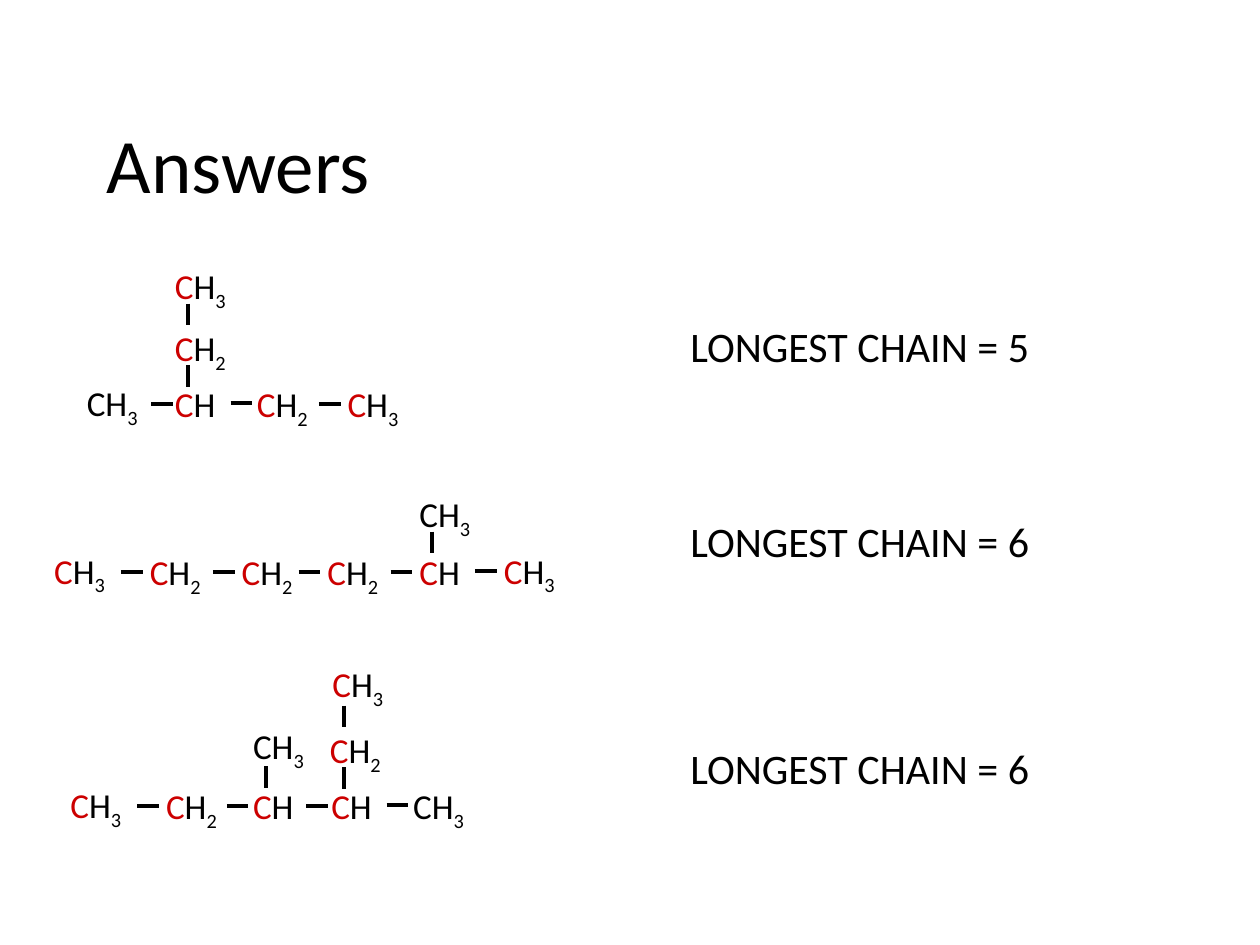
import pptx
import pptx.dml.color
import pptx.enum.shapes
import pptx.enum.text
import pptx.oxml.ns
import pptx.util
import lxml.etree

Pt = pptx.util.Pt
BLACK = "000000"
RED = "CC0000"
BOND_LENGTH = 12.4

# Formula, whether its carbon is on the longest chain, left, top
MOLECULES = [
    {
        "units": [("CH3", False, 42.5, 214.6), ("CH", True, 92.9, 215.3),
                  ("CH2", True, 139.7, 215.3), ("CH3", True, 191.5, 215.3),
                  ("CH2", True, 92.9, 182.9), ("CH3", True, 92.9, 147.6)],
        "across": [(86.4, 231.1), (131.8, 230.4), (182.2, 231.1)],
        "down": [(107.3, 208.8), (107.3, 173.5)],
        "answer": ("LONGEST CHAIN = 5", 179.3),
    },
    {
        "units": [("CH3", True, 23.8, 310.3), ("CH2", True, 78.5, 311),
                  ("CH2", True, 131, 311), ("CH2", True, 180, 311),
                  ("CH", True, 232.6, 311), ("CH3", True, 280.8, 310.3),
                  ("CH3", False, 232.6, 277.9)],
        "across": [(69.1, 326.9), (121.7, 326.9), (170.6, 326.9),
                   (223.2, 326.9), (271.4, 326.2)],
        "down": [(247, 303.8)],
        "answer": ("LONGEST CHAIN = 6", 290.9),
    },
    {
        "units": [("CH3", True, 33.1, 444.2), ("CH2", True, 87.8, 445),
                  ("CH", True, 137.5, 445), ("CH", True, 182.2, 445),
                  ("CH3", False, 229, 445), ("CH3", False, 137.5, 410.4),
                  ("CH2", True, 181.4, 412.6), ("CH3", True, 182.9, 375.1)],
        "across": [(78.5, 460.8), (129.6, 460.8), (175, 460.8), (221, 460.1)],
        "down": [(151.9, 437.8), (196.6, 438.5), (196.6, 403.2)],
        "answer": ("LONGEST CHAIN = 6", 420.5),
    },
]


def rgb(code):
    """Turn a hex string into a colour."""
    return pptx.dml.color.RGBColor.from_string(code)


def style(run, size, color=BLACK):
    """Give a run its font, size and colour."""
    run.font.name = "Calibri"
    run.font.size = Pt(size)
    run.font.color.rgb = rgb(color)


def add_box(shapes, left, top, width, height):
    """Add an empty wrapping text box and return its text frame."""
    frame = shapes.add_textbox(Pt(left), Pt(top), Pt(width), Pt(height)).text_frame
    frame.word_wrap = True
    return frame


def add_label(shapes, text, left, top, width, height, size):
    """Add a single-run line of text, centred vertically."""
    frame = add_box(shapes, left, top, width, height)
    frame.vertical_anchor = pptx.enum.text.MSO_ANCHOR.MIDDLE
    frame.text = text
    style(frame.paragraphs[0].runs[0], size)


def add_unit(shapes, formula, on_chain, left, top):
    """Add one carbon unit, its carbon red when on the longest chain."""
    paragraph = add_box(shapes, left, top, 57, 31).paragraphs[0]
    for symbol in formula:
        run = paragraph.add_run()
        run.text = symbol
        style(run, 20, RED if symbol == "C" and on_chain else BLACK)
        if symbol.isdigit():
            run.font._element.set("baseline", "-25000")


def add_bond(shapes, left, top, width=0, height=0):
    """Add a bond line without a shadow."""
    bond = shapes.add_connector(
        pptx.enum.shapes.MSO_CONNECTOR.STRAIGHT,
        Pt(left), Pt(top), Pt(left + width), Pt(top + height))
    bond.line.color.rgb = rgb(BLACK)
    bond.line.width = Pt(2.25)
    lxml.etree.SubElement(bond._element.spPr, pptx.oxml.ns.qn("a:effectLst"))


def add_molecule(slide, molecule):
    """Add a grouped molecule and its answer."""
    shapes = slide.shapes.add_group_shape().shapes
    for unit in molecule["units"]:
        add_unit(shapes, *unit)
    for left, top in molecule["across"]:
        add_bond(shapes, left, top, width=BOND_LENGTH)
    for left, top in molecule["down"]:
        add_bond(shapes, left, top, height=BOND_LENGTH)
    answer, top = molecule["answer"]
    add_label(slide.shapes, answer, 387.4, top, 271.4, 36, 24)


def main():
    """Build the slide of longest-chain answers."""
    deck = pptx.Presentation()
    deck.slide_width, deck.slide_height = Pt(720), Pt(540)
    slide = deck.slides.add_slide(deck.slide_layouts[6])
    for molecule in MOLECULES:
        add_molecule(slide, molecule)
    add_label(slide.shapes, "Answers", 54, 48, 612, 90, 44)
    deck.save("out.pptx")


if __name__ == "__main__":
    main()
